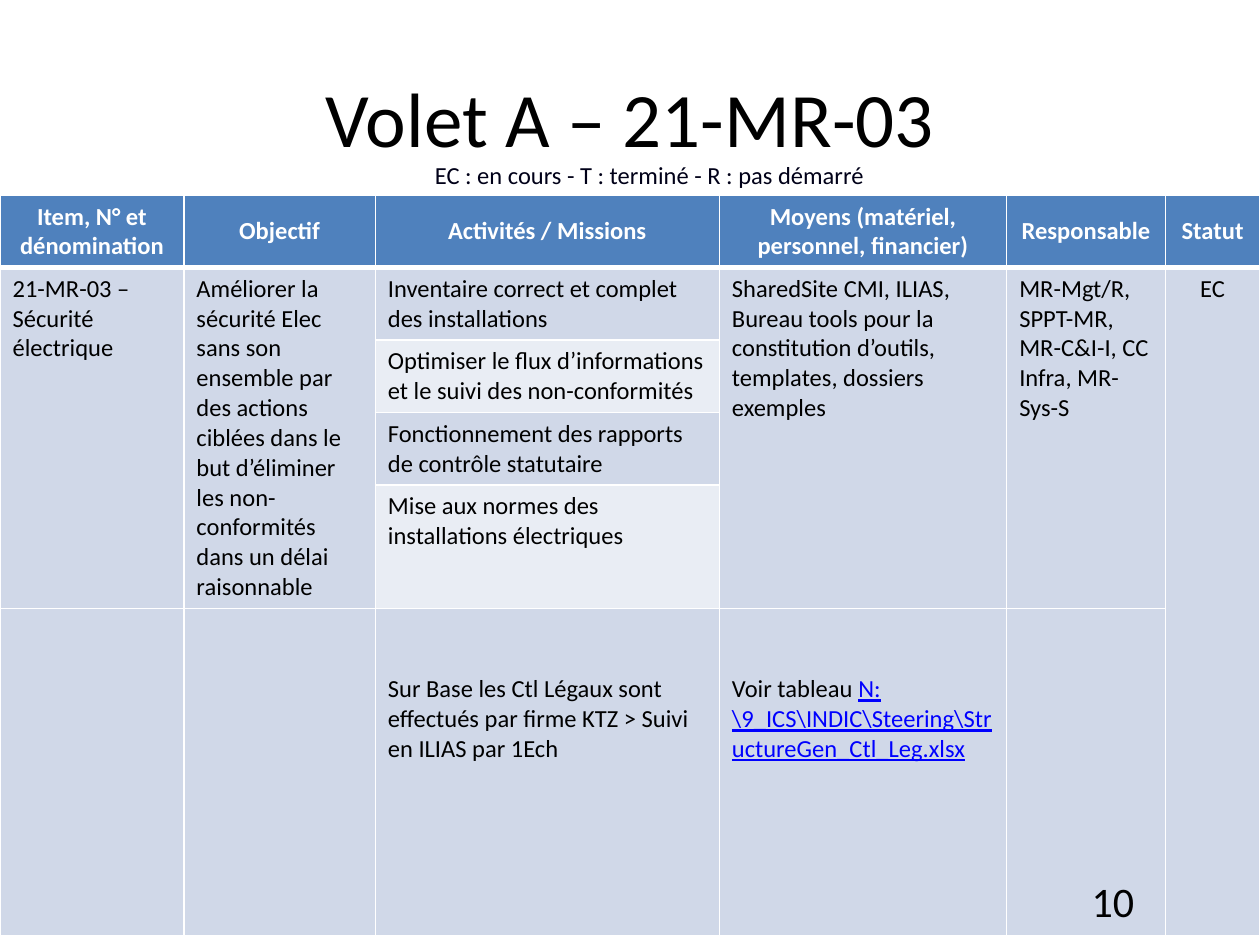
from lxml.etree import SubElement
from pptx import Presentation
from pptx.dml.color import RGBColor
from pptx.enum.text import MSO_ANCHOR, PP_ALIGN
from pptx.oxml.ns import qn
from pptx.util import Pt

COLORS = {
    "black": "000000",
    "navy": "000018",
    "white": "FFFFFF",
    "header": "4F81BD",
    "band": "D0D8E8",
    "light_band": "E9EDF4",
    "link": "0000FF",
}
COLUMN_WIDTHS = [105.1, 109.4, 196.6, 164.2, 90.7, 54]
ROW_HEIGHTS = [41.4, 41.4, 41.4, 41.4, 70.6, 187.2]
HEADERS = [
    "Item, N° et dénomination",
    "Objectif",
    "Activités / Missions",
    "Moyens (matériel, personnel, financier)",
    "Responsable",
    "Statut",
]
ACTIVITIES = [
    "Inventaire correct et complet des installations",
    "Optimiser le flux d’informations et le suivi des non-conformités",
    "Fonctionnement des rapports de contrôle statutaire",
    "Mise aux normes des installations électriques",
]
MERGED_CELLS = [
    (0, 4, "21-MR-03 – Sécurité électrique"),
    (1, 4, "Améliorer la sécurité Elec sans son ensemble par des actions ciblées "
           "dans le but d’éliminer les non-conformités dans un délai raisonnable"),
    (3, 4, "SharedSite CMI, ILIAS, Bureau tools pour la constitution d’outils, "
           "templates, dossiers exemples"),
    (4, 4, "MR-Mgt/R, SPPT-MR, MR-C&I-I, CC Infra, MR-Sys-S"),
    (5, 5, "EC"),
]
FOLLOW_UP = "Sur Base les Ctl Légaux sont effectués par firme KTZ > Suivi en ILIAS par 1Ech"
TABLE_PATH = r"N:\9_ICS\INDIC\Steering\StructureGen_Ctl_Leg.xlsx"


def add_text(para, text, size=14, color="black", bold=False, underline=False, align=None):
    para.alignment = align
    span = para.add_run()
    span.text = text
    font = span.font
    font.name = "Calibri"
    font.size = Pt(size)
    font.bold = bold
    font.underline = underline
    font.color.rgb = RGBColor.from_string(COLORS[color])


def add_label(page, bounds, text, anchor, **text_format):
    box = page.shapes.add_textbox(*map(Pt, bounds))
    frame = box.text_frame
    frame.word_wrap = True
    frame.vertical_anchor = anchor
    add_text(frame.paragraphs[0], text, **text_format)


def style_cell(cell, fill, bottom_width=1):
    properties = cell._tc.get_or_add_tcPr()
    for side, width in (("L", 1), ("R", 1), ("T", 1), ("B", bottom_width)):
        line = SubElement(properties, qn(f"a:ln{side}"), w=str(Pt(width)))
        SubElement(SubElement(line, qn("a:solidFill")), qn("a:srgbClr"), val=COLORS["white"])
    cell.fill.solid()
    cell.fill.fore_color.rgb = RGBColor.from_string(COLORS[fill])


def add_action_table(page, left, top):
    bounds = (left, top, sum(COLUMN_WIDTHS), sum(ROW_HEIGHTS))
    table = page.shapes.add_table(len(ROW_HEIGHTS), len(COLUMN_WIDTHS), *map(Pt, bounds)).table
    table.horz_banding = False
    for column, width in zip(table.columns, COLUMN_WIDTHS):
        column.width = Pt(width)
    for row, height in zip(table.rows, ROW_HEIGHTS):
        row.height = Pt(height)

    for row in range(len(ROW_HEIGHTS)):
        for column in range(len(COLUMN_WIDTHS)):
            cell = table.cell(row, column)
            if row == 0:
                style_cell(cell, "header", bottom_width=3)
            else:
                style_cell(cell, "light_band" if column == 2 and row in (2, 4) else "band")

    for column, title in enumerate(HEADERS):
        cell = table.cell(0, column)
        cell.vertical_anchor = MSO_ANCHOR.MIDDLE
        add_text(cell.text_frame.paragraphs[0], title, color="white", bold=True,
                 align=PP_ALIGN.CENTER)
    for column, last_row, text in MERGED_CELLS:
        cell = table.cell(1, column)
        cell.merge(table.cell(last_row, column))
        add_text(cell.text_frame.paragraphs[0], text,
                 align=PP_ALIGN.CENTER if column == 5 else None)
    for row, activity in enumerate(ACTIVITIES, start=1):
        add_text(table.cell(row, 2).text_frame.paragraphs[0], activity)

    follow_up, means = table.cell(5, 2), table.cell(5, 3)
    for cell in (follow_up, means):
        cell.margin_top = Pt(37.8)
    add_text(follow_up.text_frame.paragraphs[0], FOLLOW_UP)
    means_para = means.text_frame.paragraphs[0]
    add_text(means_para, "Voir tableau ")
    add_text(means_para, TABLE_PATH, color="link", underline=True)


def main():
    deck = Presentation()
    deck.slide_width, deck.slide_height = Pt(720), Pt(540)
    page = deck.slides.add_slide(deck.slide_layouts[6])
    add_label(page, (36, 21.6, 648, 90), "Volet A – 21-MR-03", MSO_ANCHOR.MIDDLE,
              size=44, align=PP_ALIGN.CENTER)
    add_action_table(page, 0, 111.6)
    add_label(page, (516.2, 500.4, 139, 28.8), "10", MSO_ANCHOR.MIDDLE,
              size=24, align=PP_ALIGN.RIGHT)
    add_label(page, (172.8, 84.2, 396.7, 27.4), "EC : en cours - T : terminé - R : pas démarré",
              MSO_ANCHOR.BOTTOM, color="navy", align=PP_ALIGN.CENTER)
    deck.save("out.pptx")


if __name__ == "__main__":
    main()
